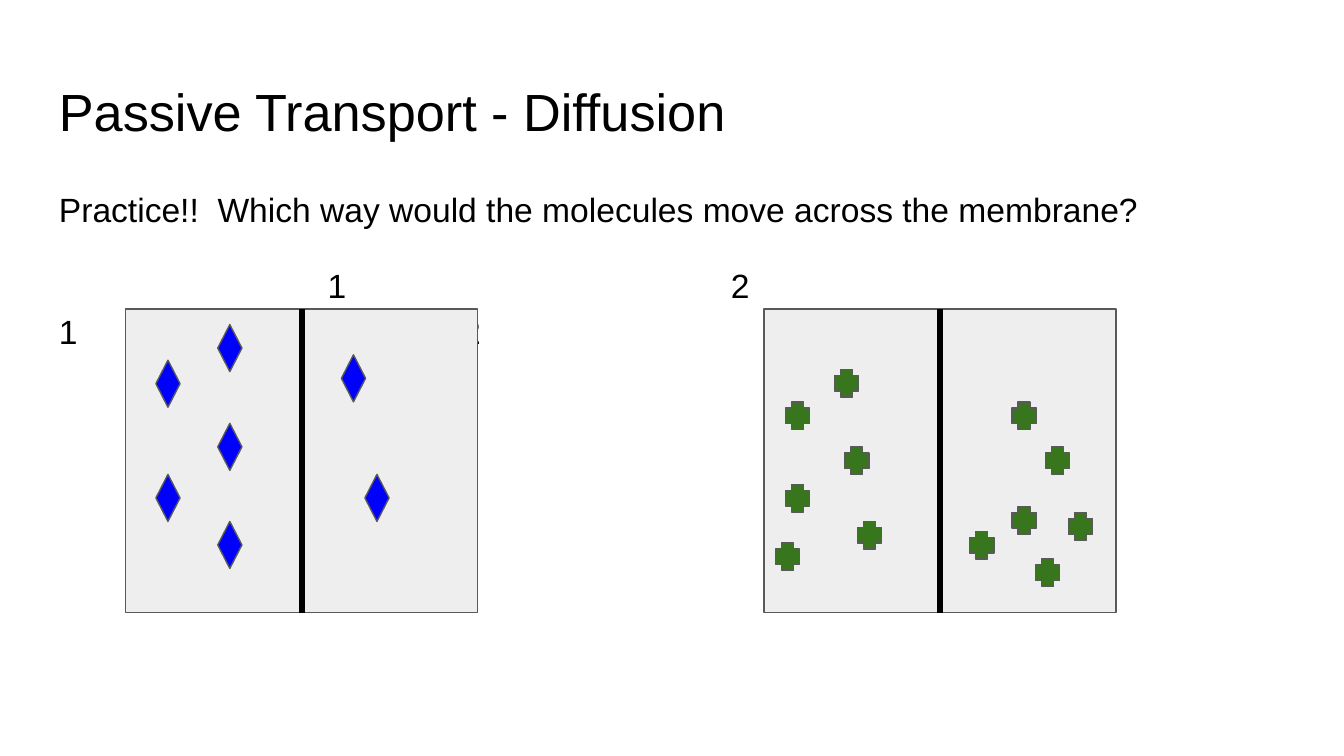
from dataclasses import dataclass

from lxml.etree import SubElement
from pptx import Presentation
from pptx.dml.color import RGBColor
from pptx.enum.shapes import MSO_CONNECTOR as Connector, MSO_SHAPE as Shape
from pptx.enum.text import MSO_ANCHOR as Anchor, PP_ALIGN as Align
from pptx.oxml.ns import qn
from pptx.util import Pt

EMU_PER_PX = 4572


@dataclass(frozen=True)
class Theme:
    """Colours, font and sizes of the slide."""
    font: str = "Arial"
    ink: str = "000000"
    cell: str = "EEEEEE"
    outline: str = "595959"
    diamond: str = "0000FF"
    cross: str = "38761D"
    title_size: int = 28
    body_size: int = 18
    outline_width: float = 0.75
    membrane_width: float = 3


THEME = Theme()
TAB_WIDTH = 200
CELL_TOP, CELL_WIDTH, CELL_HEIGHT = 460, 524, 452
DIAMONDS = [(232, 536), (232, 706), (324, 483), (324, 776), (324, 630),
            (508, 528), (543, 706)]
CROSSES = [(1258, 666), (1169, 721), (1506, 754), (1154, 808), (1257, 665),
           (1275, 776), (1506, 598), (1242, 550), (1556, 666), (1169, 598),
           (1443, 791), (1590, 764), (1541, 832)]
CROSSES = [(1257, 665), (1169, 721), (1506, 754), (1154, 808), (1276, 776),
           (1506, 598), (1242, 550), (1556, 665), (1169, 598), (1443, 791),
           (1590, 763), (1541, 832)]


def px(length):
    """Turn px into EMU."""
    return length * EMU_PER_PX


def add_textbox(slide, left, top, width, height):
    """Add an empty wrapping text frame with even insets."""
    frame = slide.shapes.add_textbox(px(left), px(top), px(width), px(height)).text_frame
    frame.word_wrap = True
    frame.vertical_anchor = Anchor.TOP
    frame.margin_left = frame.margin_right = px(20)
    frame.margin_top = frame.margin_bottom = px(20)
    return frame


def write(paragraph, text, *, size, spacing=1.0, before=0):
    """Write one formatted paragraph with an even tab grid."""
    paragraph.alignment = Align.LEFT
    paragraph.line_spacing = spacing
    paragraph.space_before = Pt(before)
    paragraph._p.get_or_add_pPr().set("defTabSz", str(px(TAB_WIDTH)))
    run = paragraph.add_run()
    run.text = text
    run.font.name = THEME.font
    run.font.size = Pt(size)
    run.font.color.rgb = RGBColor.from_string(THEME.ink)


def add_figure(slide, kind, left, top, width, height, fill):
    """Add a filled preset shape with a thin outline."""
    figure = slide.shapes.add_shape(kind, px(left), px(top), px(width), px(height))
    figure.shadow.inherit = False
    figure.fill.solid()
    figure.fill.fore_color.rgb = RGBColor.from_string(fill)
    figure.line.color.rgb = RGBColor.from_string(THEME.outline)
    figure.line.width = Pt(THEME.outline_width)
    return figure


def add_membrane(slide, cell):
    """Join the top and bottom of a cell with a thick line."""
    middle = cell.left + cell.width // 2
    membrane = slide.shapes.add_connector(
        Connector.STRAIGHT, middle, cell.top, middle, cell.top + cell.height)
    membrane.begin_connect(cell, 0)
    membrane.end_connect(cell, 2)
    membrane.line.color.rgb = RGBColor.from_string(THEME.ink)
    membrane.line.width = Pt(THEME.membrane_width)
    SubElement(membrane._element.spPr, qn("a:effectLst"))


def add_cell(slide, left, kind, size, fill, molecules):
    """Add a divided cell and its molecules."""
    cell = add_figure(slide, Shape.RECTANGLE, left, CELL_TOP,
                      CELL_WIDTH, CELL_HEIGHT, THEME.cell)
    add_membrane(slide, cell)
    for x, y in molecules:
        add_figure(slide, kind, x, y, *size, fill)


def main():
    """Build and save the slide."""
    deck = Presentation()
    deck.slide_width, deck.slide_height = px(2000), px(1125)
    slide = deck.slides.add_slide(deck.slide_layouts[6])

    title = add_textbox(slide, 68, 98, 1864, 126)
    write(title.paragraphs[0], "Passive Transport - Diffusion", size=THEME.title_size)

    practice = add_textbox(slide, 68, 252, 1864, 748)
    write(practice.paragraphs[0],
          "Practice!!  Which way would the molecules move across the membrane?",
          size=THEME.body_size, spacing=1.15)
    write(practice.add_paragraph(), "\t\t1\t\t\t2\t\t\t\t\t\t1\t\t\t2",
          size=THEME.body_size, spacing=1.15, before=16)

    add_cell(slide, 187, Shape.FLOWCHART_DECISION, (36, 70), THEME.diamond, DIAMONDS)
    add_cell(slide, 1137, Shape.CROSS, (36, 41), THEME.cross, CROSSES)
    deck.save("out.pptx")


if __name__ == "__main__":
    main()
